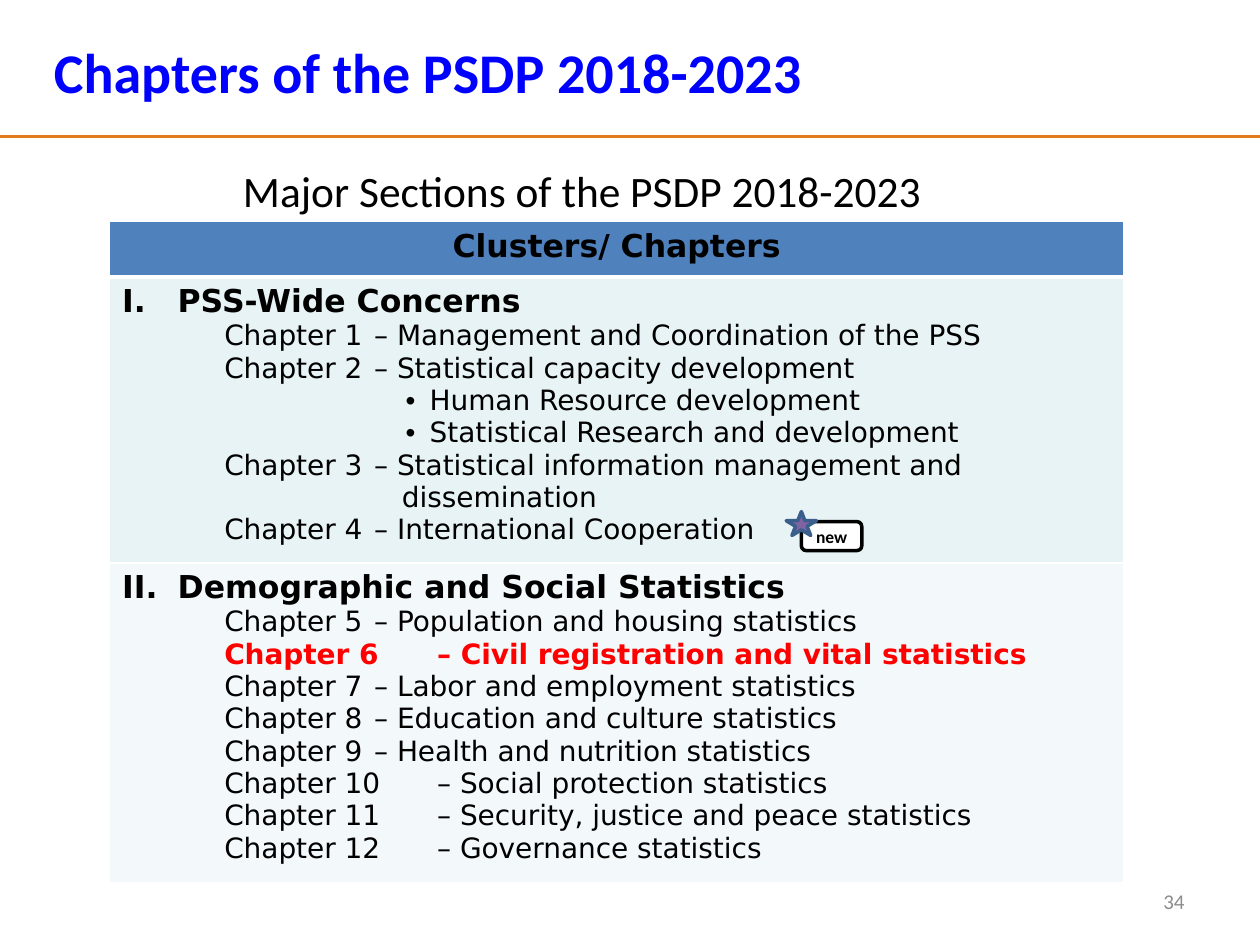
from dataclasses import dataclass
from typing import Optional

from lxml.etree import SubElement as Sub
from pptx import Presentation
from pptx.dml.color import RGBColor
from pptx.enum.shapes import MSO_CONNECTOR as Link, MSO_SHAPE as Kind
from pptx.enum.text import MSO_ANCHOR as Anchor, PP_ALIGN as Align
from pptx.oxml.ns import qn
from pptx.util import Emu, Inches, Pt

COLS, ROWS = 100, 75
HUES = {
    "white": "FFFFFF", "black": "000000", "blue": "0000FF", "red": "FF0000",
    "gray": "8C8C8C", "rule": "E17B1C", "head": "4F81BD", "mint": "E7F3F4",
    "pale": "F3F9FA", "star": "8064A2", "edge": "3A5F8C",
}


@dataclass
class Box:
    col: float
    row: float
    wide: float
    high: float

    def place(self) -> tuple:
        return tuple(unit(n) for n in (self.col, self.row, self.wide, self.high))


@dataclass
class Style:
    size: float
    hue: str = "black"
    bold: bool = False
    face: str = "Calibri"


@dataclass
class Item:
    text: str
    style: Style
    left: float = 0
    first: float = 0
    level: int = 0
    roman: int = 0
    dot: bool = False
    stop: Optional[float] = None


@dataclass
class Band:
    high: float
    fill: str
    items: list
    top: float = 1
    base: float = 1
    align: Align = Align.LEFT


def unit(count: float) -> Emu:
    return Inches(count * 10 / COLS)


def hue(name: str) -> RGBColor:
    return RGBColor.from_string(HUES[name])


def dress(para, style: Style) -> None:
    for run in para.runs:
        font = run.font
        font.name, font.size, font.bold = style.face, Pt(style.size), style.bold
        font.color.rgb = hue(style.hue)


def label(slide, box: Box, text: str, style: Style, align=Align.LEFT,
          anchor=Anchor.TOP, wrap: bool = True) -> None:
    frame = slide.shapes.add_textbox(*box.place()).text_frame
    frame.word_wrap, frame.vertical_anchor = wrap, anchor
    frame.text = text
    frame.paragraphs[0].alignment = align
    dress(frame.paragraphs[0], style)


def shape(slide, kind, box: Box, fill: str, edge: str):
    form = slide.shapes.add_shape(kind, *box.place())
    form.shadow.inherit = False
    form.fill.solid()
    form.fill.fore_color.rgb = hue(fill)
    form.line.color.rgb = hue(edge)
    form.line.width = Pt(2)
    return form


def rule(slide, row: float) -> None:
    line = slide.shapes.add_connector(Link.STRAIGHT, 0, unit(row), unit(COLS), unit(row))
    line.line.color.rgb = hue("rule")
    line.line.width = Pt(1.65)
    Sub(line._element.spPr, qn("a:effectLst"))


def write(para, item: Item) -> None:
    para.text, para.level = item.text, item.level
    props = para._p.get_or_add_pPr()
    props.set("marL", str(unit(item.left)))
    props.set("indent", str(unit(item.first)))
    if item.roman:
        Sub(props, qn("a:buAutoNum"), type="romanUcPeriod", startAt=str(item.roman))
    elif item.dot:
        Sub(props, qn("a:buFont"), typeface="Arial")
        Sub(props, qn("a:buChar"), char="•")
    else:
        Sub(props, qn("a:buNone"))
    if item.stop:
        tabs = Sub(props, qn("a:tabLst"))
        Sub(tabs, qn("a:tab"), pos=str(unit(item.stop)), algn="l")
    dress(para, item.style)


def border(cell, band: Band) -> None:
    props = cell._tc.get_or_add_tcPr()
    for side, width in zip("LRTB", (1, 1, band.top, band.base)):
        line = Sub(props, qn(f"a:ln{side}"), w=str(Pt(width)))
        Sub(Sub(line, qn("a:solidFill")), qn("a:srgbClr"), val=HUES["white"])


def grid(slide, box: Box, bands: list) -> None:
    table = slide.shapes.add_table(len(bands), 1, *box.place()).table
    for row, band in zip(table.rows, bands):
        row.height = unit(band.high)
        cell = row.cells[0]
        border(cell, band)
        cell.fill.solid()
        cell.fill.fore_color.rgb = hue(band.fill)
        frame = cell.text_frame
        for spot, item in enumerate(band.items):
            para = frame.add_paragraph() if spot else frame.paragraphs[0]
            write(para, item)
            para.alignment = band.align


HEAD = Style(18, bold=True, face="DejaVu Sans")
BODY = Style(16, face="DejaVu Sans")
ALERT = Style(16, "red", True, "DejaVu Sans")


def part(number: int, text: str) -> Item:
    return Item(text, HEAD, 4.4, -4.4, roman=number)


def chapter(number: int, text: str, style: Style = BODY, stop: float = 21.25) -> Item:
    return Item(f"Chapter {number}\t– {text}", style, first=8.1, level=1, stop=stop)


def point(text: str) -> Item:
    return Item(text, BODY, 24.4, -1.9, level=4, dot=True)


BANDS = [
    Band(4.4, "head", [Item("Clusters/ Chapters", HEAD)], base=3, align=Align.CENTER),
    Band(22.7, "mint", [
        part(1, "PSS-Wide Concerns"),
        chapter(1, "Management and Coordination of the PSS"),
        chapter(2, "Statistical capacity development"),
        point("Human Resource development"),
        point("Statistical Research and development"),
        chapter(3, "Statistical information management and"),
        Item("dissemination", BODY, 22.2, level=1),
        chapter(4, "International Cooperation"),
    ], top=3),
    Band(25.3, "pale", [
        part(2, "Demographic and Social Statistics"),
        chapter(5, "Population and housing statistics"),
        chapter(6, "Civil registration and vital statistics", ALERT, 22.7),
        chapter(7, "Labor and employment statistics"),
        chapter(8, "Education and culture statistics"),
        chapter(9, "Health and nutrition statistics"),
        chapter(10, "Social protection statistics"),
        chapter(11, "Security, justice and peace statistics"),
        chapter(12, "Governance statistics"),
    ]),
]


def main() -> None:
    deck = Presentation()
    deck.slide_width, deck.slide_height = unit(COLS), unit(ROWS)
    slide = deck.slides.add_slide(deck.slide_layouts[6])
    rule(slide, 10.8)
    label(slide, Box(18.3, 12.5, 62.9, 4.5), "Major Sections of the PSDP 2018-2023", Style(24.8))
    label(slide, Box(71.7, 69.5, 23.3, 4), "34", Style(12, "gray"), Align.RIGHT, Anchor.MIDDLE)
    grid(slide, Box(8.7, 17.6, 80.5, sum(band.high for band in BANDS)), BANDS)
    badge = shape(slide, Kind.ROUNDED_RECTANGLE, Box(63.6, 41.4, 4.8, 2.3), "white", "black")
    frame = badge.text_frame
    frame.margin_left = frame.margin_right = frame.margin_top = frame.margin_bottom = 0
    frame.vertical_anchor = Anchor.MIDDLE
    frame.text = "new"
    frame.paragraphs[0].alignment = Align.CENTER
    dress(frame.paragraphs[0], Style(10, bold=True))
    shape(slide, Kind.STAR_5_POINT, Box(62.4, 40.6, 2.4, 1.9), "star", "edge")
    label(slide, Box(3.3, 2.5, 61.9, 6.4), "Chapters of the PSDP 2018-2023",
          Style(32, "blue", True), wrap=False)
    deck.save("out.pptx")


if __name__ == "__main__":
    main()
